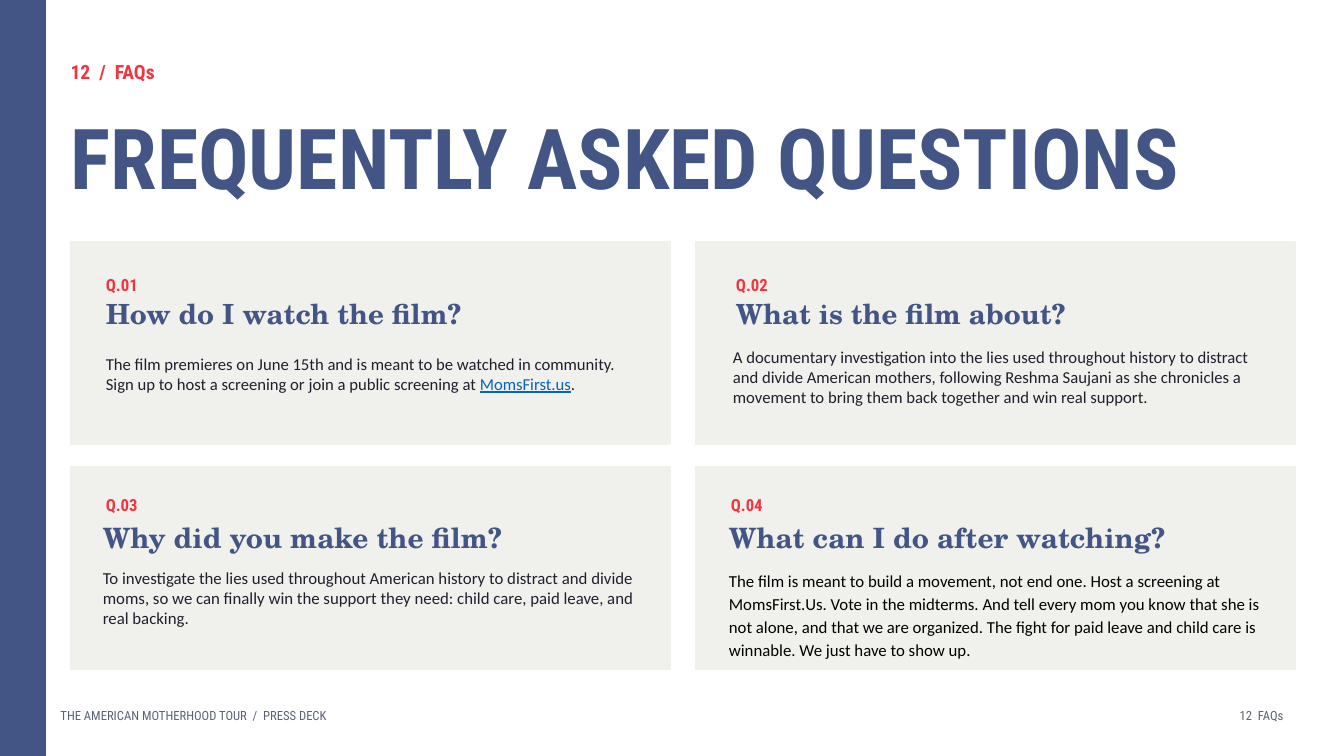
from dataclasses import dataclass

from pptx import Presentation
from pptx.dml.color import RGBColor
from pptx.enum import shapes, text
from pptx.util import Inches, Pt


@dataclass(frozen=True)
class Theme:
    navy: str = "425585"
    red: str = "F3343F"
    card: str = "F0F1ED"
    ink: str = "1F1F2E"
    black: str = "000000"
    link: str = "0563C1"
    muted: str = "5A6275"
    display_font: str = "Roboto Condensed"
    heading_font: str = "TeX Gyre Schola"
    body_font: str = "Calibri"
    title_size: float = 60
    section_size: float = 14
    footer_size: float = 9


@dataclass(frozen=True)
class CardRow:
    """Vertical offsets are measured from the top of the card."""
    top: float
    label_offset: float
    label_height: float
    heading_offset: float
    heading_height: float
    label_size: float
    heading_size: float
    body_size: float


@dataclass(frozen=True)
class Question:
    """Insets are measured from the left of the card, body_offset from its top."""
    heading: str
    answer: str
    label_inset: float
    heading_inset: float
    body_inset: float
    body_offset: float
    body_width: float
    link: str = ""
    color: str = Theme.ink
    line_spacing: float = 1.0


CARD_LEFTS = (0.7, 6.9)
CARD_WIDTH, CARD_HEIGHT = 5.95, 2.01
ROWS = (
    CardRow(2.4, 0.25, 0.35, 0.54, 0.62, 12, 19.8, 11.9),
    CardRow(4.63, 0.22, 0.31, 0.53, 0.7, 11.9, 20, 12),
)
QUESTIONS = (
    Question(
        "How do I watch the film?",
        "The film premieres on June 15th and is meant to be watched in community. "
        "Sign up to host a screening or join a public screening at MomsFirst.us.",
        0.35, 0.35, 0.35, 1.11, 5.26, link="MomsFirst.us"),
    Question(
        "What is the film about?",
        "A documentary investigation into the lies used throughout history to distract "
        "and divide American mothers, following Reshma Saujani as she chronicles a "
        "movement to bring them back together and win real support.",
        0.4, 0.4, 0.37, 1.04, 5.2),
    Question(
        "Why did you make the film?",
        "To investigate the lies used throughout American history to distract and divide "
        "moms, so we can finally win the support they need: child care, paid leave, and "
        "real backing.",
        0.35, 0.32, 0.32, 1.0, 5.3),
    Question(
        "What can I do after watching?",
        "The film is meant to build a movement, not end one. Host a screening at "
        "MomsFirst.Us. Vote in the midterms. And tell every mom you know that she is not "
        "alone, and that we are organized. The fight for paid leave and child care is "
        "winnable. We just have to show up.",
        0.35, 0.33, 0.33, 1.0, 5.3, color=Theme.black, line_spacing=1.15),
)


class SlideBuilder:
    def __init__(self, slide, theme):
        self.slide = slide
        self.theme = theme

    def set_text(self, shape, content, *, size, color, font=None, bold=False, link="",
                 align=text.PP_ALIGN.LEFT, anchor=text.MSO_ANCHOR.MIDDLE, line_spacing=1.0):
        """Fill a shape with one paragraph, underlining the part given as link."""
        frame = shape.text_frame
        frame.word_wrap = True
        frame.auto_size = text.MSO_AUTO_SIZE.NONE
        frame.vertical_anchor = anchor
        frame.margin_left = frame.margin_right = frame.margin_top = frame.margin_bottom = 0
        paragraph = frame.paragraphs[0]
        paragraph.alignment = align
        paragraph.line_spacing = line_spacing
        before, linked, after = content.partition(link) if link else (content, "", "")
        for part, is_link in ((before, False), (linked, True), (after, False)):
            if not part:
                continue
            run = paragraph.add_run()
            run.text = part
            run.font.name = font or self.theme.display_font
            run.font.size = Pt(size)
            run.font.bold = bold
            run.font.underline = is_link
            run.font.color.rgb = RGBColor.from_string(self.theme.link if is_link else color)

    def title(self, content, left, top, width, height):
        shape = self.slide.shapes.title
        shape.left, shape.top = Inches(left), Inches(top)
        shape.width, shape.height = Inches(width), Inches(height)
        self.set_text(shape, content, size=self.theme.title_size, color=self.theme.navy,
                      bold=True)

    def label(self, content, left, top, width, height, **style):
        shape = self.slide.shapes.add_textbox(
            Inches(left), Inches(top), Inches(width), Inches(height))
        self.set_text(shape, content, **style)

    def block(self, left, top, width, height, color):
        shape = self.slide.shapes.add_shape(
            shapes.MSO_SHAPE.RECTANGLE,
            Inches(left), Inches(top), Inches(width), Inches(height))
        shape.shadow.inherit = False
        shape.fill.solid()
        shape.fill.fore_color.rgb = RGBColor.from_string(color)
        shape.line.color.rgb = RGBColor.from_string(color)
        shape.line.width = Pt(1)

    def card(self, number, question, left, row):
        theme, top = self.theme, text.MSO_ANCHOR.TOP
        self.block(left, row.top, CARD_WIDTH, CARD_HEIGHT, theme.card)
        self.label(f"Q.{number:02}", left + question.label_inset, row.top + row.label_offset,
                   1.5, row.label_height, size=row.label_size, color=theme.red, bold=True)
        self.label(question.heading, left + question.heading_inset,
                   row.top + row.heading_offset, question.body_width, row.heading_height,
                   size=row.heading_size, color=theme.navy, font=theme.heading_font,
                   bold=True, anchor=top)
        self.label(question.answer, left + question.body_inset,
                   row.top + question.body_offset, question.body_width, 0.8,
                   size=row.body_size, color=question.color, font=theme.body_font,
                   link=question.link, anchor=top, line_spacing=question.line_spacing)


def main():
    presentation = Presentation()
    presentation.slide_width, presentation.slide_height = Inches(13.33), Inches(7.5)
    theme = Theme()
    slide = presentation.slides.add_slide(presentation.slide_layouts.get_by_name("Title Only"))
    builder = SlideBuilder(slide, theme)

    builder.block(0, 0, 0.45, 7.5, theme.navy)
    builder.label("12  /  FAQs", 0.7, 0.55, 11.93, 0.32,
                  size=theme.section_size, color=theme.red, bold=True)
    builder.title("FREQUENTLY ASKED QUESTIONS", 0.7, 1.05, 12, 1)

    for index, question in enumerate(QUESTIONS):
        row, column = divmod(index, len(CARD_LEFTS))
        builder.card(index + 1, question, CARD_LEFTS[column], ROWS[row])

    footer = {"size": theme.footer_size, "color": theme.muted}
    builder.label("THE AMERICAN MOTHERHOOD TOUR  /  PRESS DECK", 0.6, 6.95, 7, 0.3, **footer)
    builder.label("12  FAQs", 7.73, 6.95, 5, 0.3, align=text.PP_ALIGN.RIGHT, **footer)

    presentation.save("out.pptx")


if __name__ == "__main__":
    main()
